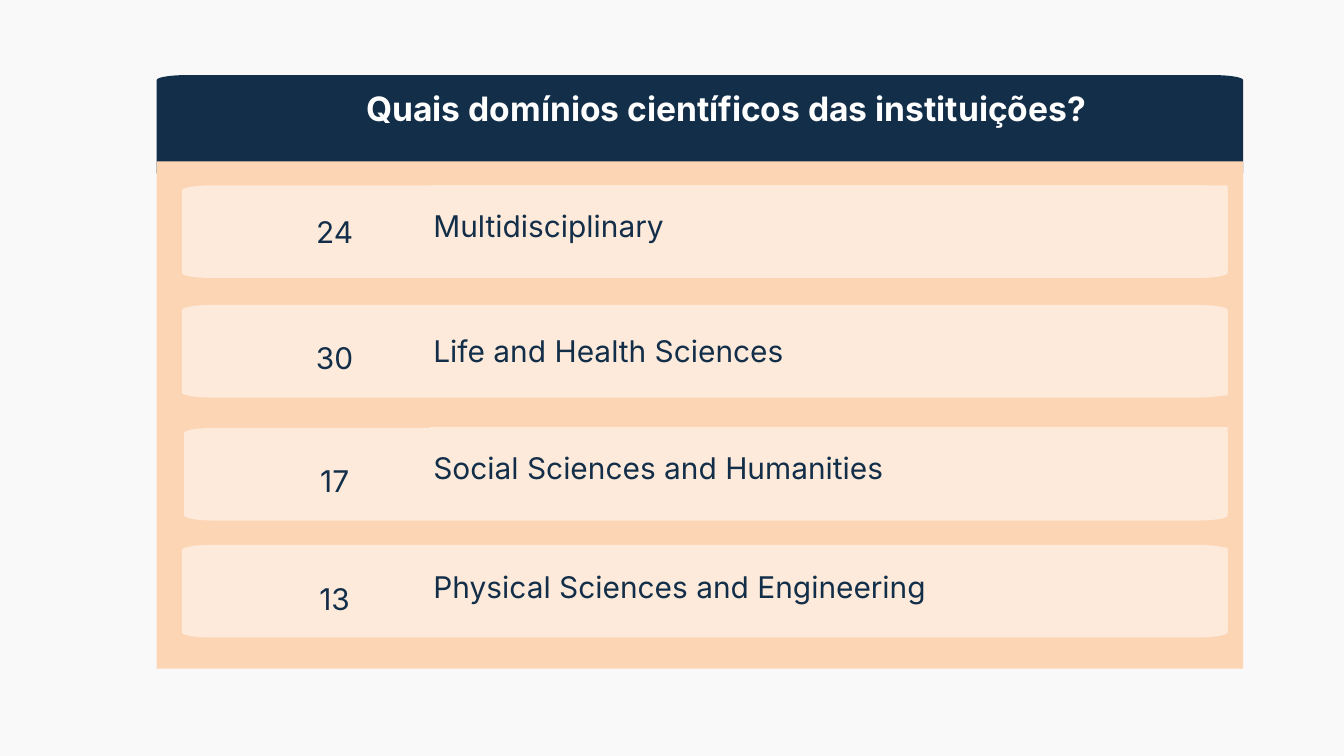
from dataclasses import dataclass
from math import cos, radians, sin

from pptx import Presentation
from pptx.dml.color import RGBColor
from pptx.enum.shapes import MSO_SHAPE
from pptx.enum.text import MSO_ANCHOR, MSO_AUTO_SIZE, PP_ALIGN
from pptx.shapes.autoshape import Shape
from pptx.slide import Slide
from pptx.text.text import TextFrame
from pptx.util import Cm, Pt

NAVY, WHITE, PAPER = "132E49", "FFFFFF", "F9F9F9"
PEACH, CREAM = "FCD5B5", "FDEADA"
PANEL_LEFT, PANEL_WIDTH = 5.92, 41.07
ROW_RIGHT, ROW_HEIGHT = 46.4, 3.5
LABEL_LEFT = 16.23
COUNT_LEFT, COUNT_HEIGHT = 9.07, 2.06
CORNER_WIDTH, CORNER_HEIGHT = 1.12, 0.19


@dataclass(frozen=True)
class Box:
    left: float
    top: float
    width: float
    height: float

    def lengths(self) -> tuple[Cm, Cm, Cm, Cm]:
        return Cm(self.left), Cm(self.top), Cm(self.width), Cm(self.height)


@dataclass(frozen=True)
class Domain:
    count: str
    label: str
    row_left: float
    row_top: float
    label_top: float
    label_height: float
    count_top: float


DOMAINS = [
    Domain("24", "Multidisciplinary", 6.88, 7.01, 7.01, 3.23, 7.06),
    Domain("30", "Life and Health Sciences", 6.88, 11.53, 11.73, 3.23, 11.81),
    Domain("17", "Social Sciences and Humanities", 6.96, 16.18, 16.15, 3.25, 16.48),
    Domain("13", "Physical Sciences and Engineering", 6.88, 20.6, 20.7, 3.12, 20.93),
]


def rgb(code: str) -> RGBColor:
    return RGBColor.from_string(code)


def paint(shape: Shape, color: str) -> None:
    shape.shadow.inherit = False
    shape.fill.solid()
    shape.fill.fore_color.rgb = rgb(color)
    shape.line.fill.background()


def draw_rectangle(slide: Slide, box: Box, color: str) -> Shape:
    rectangle = slide.shapes.add_shape(MSO_SHAPE.RECTANGLE, *box.lengths())
    paint(rectangle, color)
    return rectangle


def draw_rounded_band(slide: Slide, box: Box, color: str) -> None:
    left, right = box.left + CORNER_WIDTH, box.left + box.width - CORNER_WIDTH
    top, bottom = box.top + CORNER_HEIGHT, box.top + box.height - CORNER_HEIGHT
    corners = [(right, bottom, 0), (left, bottom, 90), (left, top, 180), (right, top, 270)]
    outline = [
        (
            Cm(x + CORNER_WIDTH * cos(radians(start + step))),
            Cm(y + CORNER_HEIGHT * sin(radians(start + step))),
        )
        for x, y, start in corners
        for step in range(0, 91, 10)
    ]
    builder = slide.shapes.build_freeform(*outline[0])
    builder.add_line_segments(outline[1:], close=True)
    paint(builder.convert_to_shape(), color)


def write(
    frame: TextFrame,
    words: str,
    size: float,
    color: str,
    spacing: float,
    align: PP_ALIGN = PP_ALIGN.CENTER,
    anchor: MSO_ANCHOR = MSO_ANCHOR.TOP,
    inset: float = 0,
    bold: bool = False,
) -> None:
    frame.word_wrap = True
    frame.auto_size = MSO_AUTO_SIZE.NONE
    frame.vertical_anchor = anchor
    frame.margin_left = frame.margin_right = Cm(inset)
    frame.margin_top = frame.margin_bottom = Cm(inset)
    paragraph = frame.paragraphs[0]
    paragraph.alignment = align
    paragraph.line_spacing = Pt(spacing)
    run = paragraph.add_run()
    run.text = words
    run.font.name = "Inter"
    run.font.size = Pt(size)
    run.font.bold = bold
    run.font.color.rgb = rgb(color)


def draw_header(slide: Slide) -> None:
    draw_rounded_band(slide, Box(PANEL_LEFT, 2.84, PANEL_WIDTH, 3.89), NAVY)
    title = slide.shapes.title
    slide.shapes.element.append(title.element)
    title.left, title.top, title.width, title.height = Box(8.53, 3.81, 37.87, 1.09).lengths()
    write(
        title.text_frame,
        "Quais domínios científicos das instituições?",
        36, WHITE, 29.4, bold=True,
    )


def draw_domain(slide: Slide, domain: Domain) -> None:
    row_width = ROW_RIGHT - domain.row_left
    draw_rounded_band(slide, Box(domain.row_left, domain.row_top, row_width, ROW_HEIGHT), CREAM)
    label_box = Box(LABEL_LEFT, domain.label_top, ROW_RIGHT - LABEL_LEFT, domain.label_height)
    label = draw_rectangle(slide, label_box, CREAM)
    write(
        label.text_frame, domain.label, 32, NAVY, 33.6,
        PP_ALIGN.LEFT, MSO_ANCHOR.MIDDLE, inset=0.15,
    )
    count_box = Box(COUNT_LEFT, domain.count_top, LABEL_LEFT - COUNT_LEFT, COUNT_HEIGHT)
    count = slide.shapes.add_textbox(*count_box.lengths())
    write(count.text_frame, domain.count, 32, NAVY, 67.2)


def main() -> None:
    presentation = Presentation()
    presentation.slide_width, presentation.slide_height = Cm(50.8), Cm(28.58)
    slide = presentation.slides.add_slide(presentation.slide_layouts[5])
    slide.background.fill.solid()
    slide.background.fill.fore_color.rgb = rgb(PAPER)
    draw_header(slide)
    draw_rectangle(slide, Box(PANEL_LEFT, 6.1, PANEL_WIDTH, 19.18), PEACH)
    for domain in DOMAINS:
        draw_domain(slide, domain)
    presentation.save("out.pptx")


if __name__ == "__main__":
    main()
